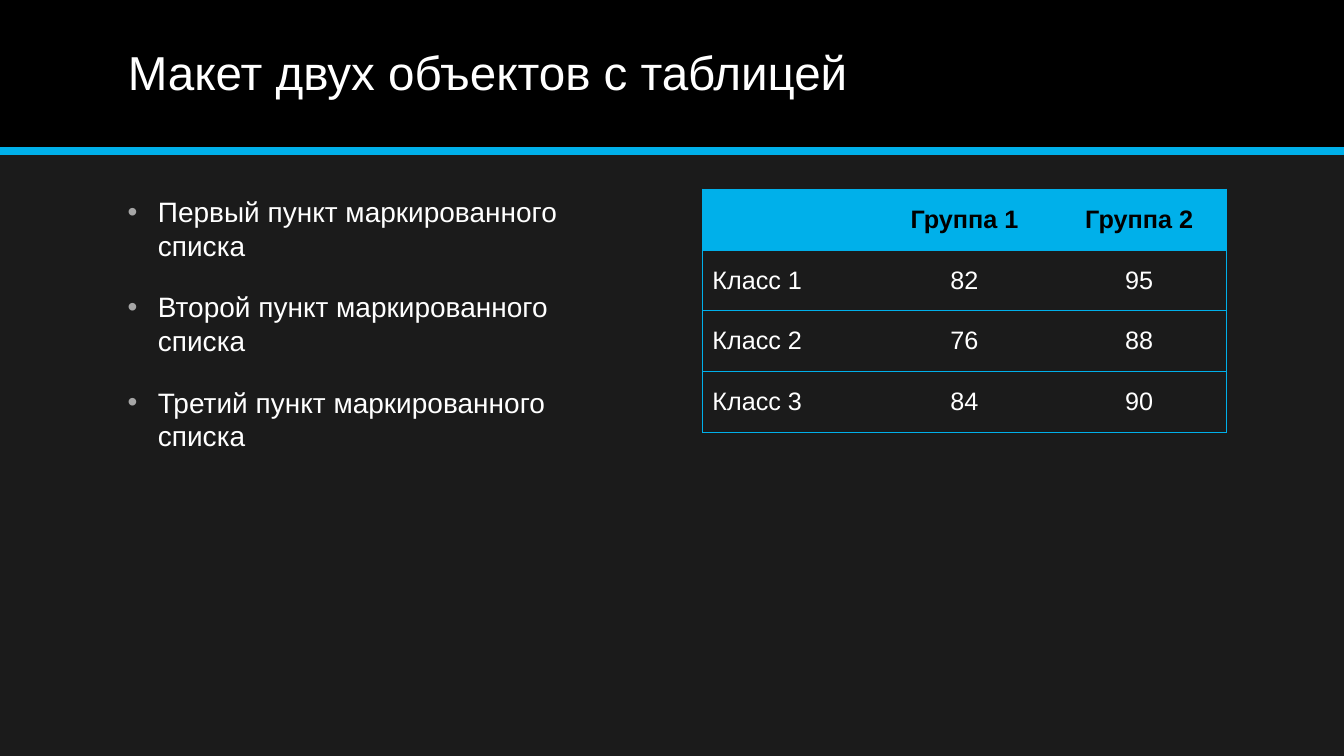
from dataclasses import dataclass

from lxml import etree
from pptx import Presentation
from pptx import util as u
from pptx.dml.color import RGBColor
from pptx.enum import shapes, text
from pptx.oxml import ns


@dataclass(frozen=True)
class Theme:
    font: str = "Arial"
    background: str = "1B1B1B"
    band: str = "000000"
    accent: str = "00B0EA"
    light: str = "FFFFFF"
    dark: str = "000000"
    bullet: str = "A6A6A6"
    title_size: int = 34
    body_size: int = 20
    table_size: int = 18
    rule_width: float = 6
    border_width: float = 0.5


THEME = Theme()
SLIDE_W, SLIDE_H = u.Cm(33.87), u.Cm(19.05)
BAND_H = u.Cm(3.81)
MARGIN = u.Cm(2.97)
CONTENT_W = u.Cm(13.21)
NO_TABLE_STYLE = "{2D5ABB26-0587-4C30-8999-92F81FD0307C}"

TITLE = "Макет двух объектов с таблицей"
POINTS = [f"{order} пункт маркированного списка"
          for order in ("Первый", "Второй", "Третий")]
SCORES = [
    ["", "Группа 1", "Группа 2"],
    ["Класс 1", "82", "95"],
    ["Класс 2", "76", "88"],
    ["Класс 3", "84", "90"],
]


def rgb(color):
    return RGBColor.from_string(color)


def add_xml(parent, tag, **attrs):
    return etree.SubElement(parent, ns.qn(tag), attrs)


def format_runs(p, size, color, bold=False):
    for r in p.runs:
        r.font.name = THEME.font
        r.font.size = u.Pt(size)
        r.font.bold = bold
        r.font.color.rgb = rgb(color)


def add_header_band(s):
    """Draw the band and its rule behind the title."""
    band = s.shapes.add_shape(shapes.MSO_SHAPE.RECTANGLE, 0, 0, SLIDE_W, BAND_H)
    band.shadow.inherit = False
    band.fill.solid()
    band.fill.fore_color.rgb = rgb(THEME.band)
    band.line.fill.background()

    rule = s.shapes.add_connector(
        shapes.MSO_CONNECTOR.STRAIGHT, 0, BAND_H, SLIDE_W, BAND_H)
    rule.line.color.rgb = rgb(THEME.accent)
    rule.line.width = u.Pt(THEME.rule_width)
    add_xml(rule._element.spPr, "a:effectLst")

    tree = s.shapes._spTree
    for position, sp in enumerate((band, rule), start=2):
        tree.remove(sp._element)
        tree.insert(position, sp._element)


def set_title(s, title):
    sp = s.shapes.title
    sp.left, sp.top = MARGIN, u.Cm(0.36)
    sp.width, sp.height = u.Cm(27.94), u.Cm(3.05)
    tf = sp.text_frame
    tf.text = title
    tf.auto_size = text.MSO_AUTO_SIZE.NONE
    tf.vertical_anchor = text.MSO_ANCHOR.MIDDLE
    p = tf.paragraphs[0]
    p.alignment = text.PP_ALIGN.LEFT
    p.line_spacing = 0.9
    format_runs(p, THEME.title_size, THEME.light)


def add_bullet(p):
    pPr = p._p.get_or_add_pPr()
    indent = u.Cm(0.76)
    pPr.set("marL", str(indent))
    pPr.set("indent", str(-indent))
    color = add_xml(pPr, "a:buClr")
    add_xml(color, "a:srgbClr", val=THEME.bullet)
    add_xml(pPr, "a:buFont", typeface=THEME.font)
    add_xml(pPr, "a:buChar", char="•")


def add_bullet_list(s, points):
    box = s.shapes.add_textbox(MARGIN, u.Cm(4.78), CONTENT_W, u.Cm(12.4))
    tf = box.text_frame
    tf.word_wrap = True
    tf.text = "\n".join(points)
    for p in tf.paragraphs:
        p.space_before = u.Pt(20)
        add_bullet(p)
        format_runs(p, THEME.body_size, THEME.light)


def add_borders(cell, sides):
    tcPr = cell._tc.get_or_add_tcPr()
    for side in sides:
        ln = add_xml(tcPr, f"a:ln{side}", w=str(u.Pt(THEME.border_width)))
        fill = add_xml(ln, "a:solidFill")
        add_xml(fill, "a:srgbClr", val=THEME.accent)


def format_cell(cell, row, col, last_col):
    # Horizontal rules everywhere, vertical ones only on the outer edges
    sides = ["T", "B"]
    if col == 0:
        sides.insert(0, "L")
    if col == last_col:
        sides.insert(0, "R")
    add_borders(cell, sides)

    is_header = row == 0
    if is_header:
        cell.fill.solid()
        cell.fill.fore_color.rgb = rgb(THEME.accent)
    else:
        cell.fill.background()
    cell.vertical_anchor = text.MSO_ANCHOR.MIDDLE
    p = cell.text_frame.paragraphs[0]
    p.alignment = text.PP_ALIGN.CENTER if col else text.PP_ALIGN.LEFT
    format_runs(p, THEME.table_size,
                THEME.dark if is_header else THEME.light, bold=is_header)


def add_score_table(s, rows):
    frame = s.shapes.add_table(len(rows), len(rows[0]), u.Cm(17.7), u.Cm(4.76),
                               CONTENT_W, u.Cm(6.14))
    table = frame.table
    table.horz_banding = False
    table._tbl.tblPr.find(ns.qn("a:tableStyleId")).text = NO_TABLE_STYLE
    for i, row in enumerate(rows):
        for j, value in enumerate(row):
            cell = table.cell(i, j)
            cell.text = value
            format_cell(cell, i, j, len(row) - 1)


def main():
    prs = Presentation()
    prs.slide_width, prs.slide_height = SLIDE_W, SLIDE_H
    s = prs.slides.add_slide(prs.slide_layouts[5])

    # Background and header
    s.background.fill.solid()
    s.background.fill.fore_color.rgb = rgb(THEME.background)
    set_title(s, TITLE)
    add_header_band(s)

    # Two content columns
    add_bullet_list(s, POINTS)
    add_score_table(s, SCORES)

    prs.save("out.pptx")


if __name__ == "__main__":
    main()
